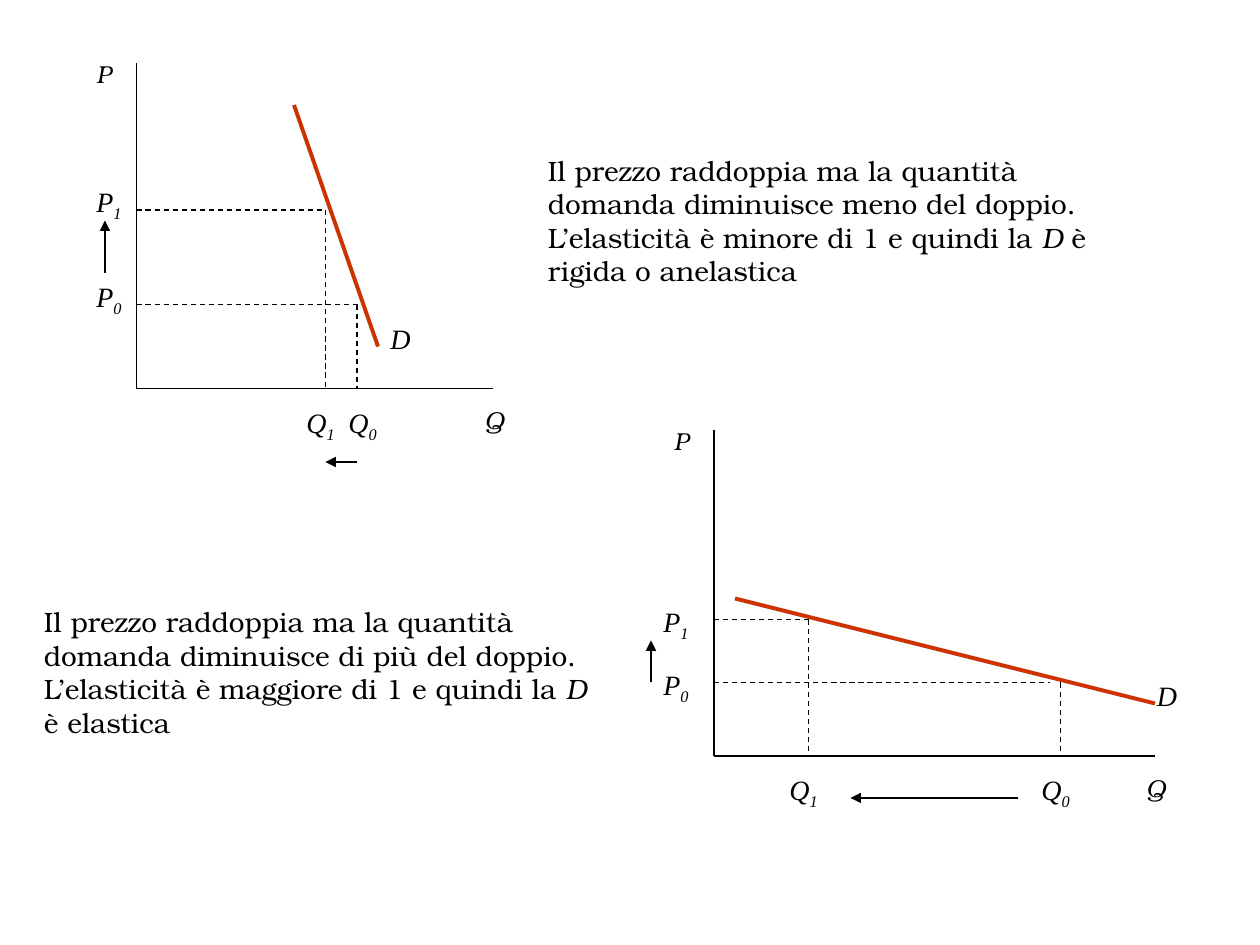
from lxml import etree
from pptx import Presentation
from pptx import util as u
from pptx.dml.color import RGBColor
from pptx.enum import dml, shapes, text
from pptx.oxml import ns

COLUMNS, ROWS = 120, 90
CELL = u.Inches(10) / COLUMNS
BLACK, RED = "000000", "CC3300"
SERIF, BOOK = "Times New Roman", "TeX Gyre Bonum"


def cells(*counts):
    return [u.Emu(round(count * CELL)) for count in counts]


def colour(value):
    return RGBColor.from_string(value)


def add_line(region, start, end, stroke=BLACK, width=0.75, dashed=False, arrow=False):
    line = region.shapes.add_connector(
        shapes.MSO_CONNECTOR.STRAIGHT, *cells(*start, *end))
    line.line.color.rgb = colour(stroke)
    line.line.width = u.Pt(width)
    if dashed:
        line.line.dash_style = dml.MSO_LINE.DASH
    properties = line.element.spPr
    if arrow:
        outline = properties.find(ns.qn("a:ln"))
        etree.SubElement(outline, ns.qn("a:tailEnd"), type="triangle")
    etree.SubElement(properties, ns.qn("a:effectLst"))


def add_text(region, place, spans, size=16, font=SERIF, wrap=True):
    box = region.shapes.add_textbox(*cells(*place))
    box.text_frame.word_wrap = wrap
    box.text_frame.auto_size = text.MSO_AUTO_SIZE.SHAPE_TO_FIT_TEXT
    para = box.text_frame.paragraphs[0]
    for words, italic, lowered in spans:
        span = para.add_run()
        span.text = words
        span.font.size = u.Pt(size)
        span.font.name = font
        span.font.italic = italic
        span.font.color.rgb = colour(BLACK)
        if lowered:
            span.font._element.set("baseline", "-25000")


def add_label(region, place, letter, index="", **style):
    spans = [(letter, True, False)]
    if index:
        spans.append((index, True, True))
    add_text(region, place, spans, **style)


def add_demand_chart(page, box, demand, prices, quantities, guide_end,
                     price_labels, quantity_labels, demand_label,
                     price_arrow, quantity_arrow):
    left, top, width, height = box
    group = page.shapes.add_group_shape()

    def at(x, y):
        return left + x, top + y

    add_line(group, at(0, 0), at(0, height))
    add_line(group, at(0, height), at(width, height))
    add_line(group, *[at(*point) for point in demand], stroke=RED, width=2.25)

    ends = (guide_end, quantities[1])
    for index, price, quantity, end in zip("01", prices, quantities, ends):
        add_line(group, at(0, price), at(end, price), dashed=True)
        add_line(group, at(quantity, price), at(quantity, height), dashed=True)

    for index, (x, y) in zip("01", price_labels):
        add_label(group, (*at(x, y), 6, 4.4), "P", index)
    for index, x in zip("01", quantity_labels):
        add_label(group, (*at(x, height + 1), 7, 4.4), "Q", index)

    add_label(group, (*at(-5, -1), 5, 4), "P", size=14, font=BOOK)
    add_label(group, (*at(width - 2, height + 1), 4.2, 4), "Q",
              size=14, font=BOOK, wrap=False)
    add_label(group, (*at(*demand_label), 4.3, 4.4), "D", wrap=False)

    for start, end in (price_arrow, quantity_arrow):
        add_line(group, at(*start), at(*end), arrow=True)


def add_comment(page, box, opening, ending):
    spans = [(opening, False, False), ("D", True, False), (ending, False, False)]
    add_text(page, box, spans, font=BOOK)


def main():
    deck = Presentation()
    deck.slide_width, deck.slide_height = cells(COLUMNS, ROWS)
    page = deck.slides.add_slide(deck.slide_layouts[6])

    add_demand_chart(
        page, (13, 6, 34, 31),
        demand=((15, 4), (23, 27)),
        prices=(23, 14), quantities=(21, 18), guide_end=21,
        price_labels=((-5, 20), (-5, 11)), quantity_labels=(19, 15),
        demand_label=(23, 24),
        price_arrow=((-3, 20), (-3, 15)),
        quantity_arrow=((21, 38), (18, 38)))
    add_comment(
        page, (51, 14, 54.1, 14),
        "Il prezzo raddoppia ma la quantità domanda diminuisce meno del doppio. "
        "L’elasticità è minore di 1 e quindi la ",
        " è rigida o anelastica")
    add_comment(
        page, (3, 57, 54.1, 14),
        "Il prezzo raddoppia ma la quantità domanda diminuisce di più del doppio. "
        "L’elasticità è maggiore di 1 e quindi la ",
        " è elastica")
    add_demand_chart(
        page, (68, 41, 42, 31),
        demand=((2, 16), (42, 26)),
        prices=(24, 18), quantities=(33, 9), guide_end=32,
        price_labels=((-6, 22), (-6, 16)), quantity_labels=(30, 6),
        demand_label=(41, 23),
        price_arrow=((-6, 24), (-6, 20)),
        quantity_arrow=((29, 35), (13, 35)))

    deck.save("out.pptx")


if __name__ == "__main__":
    main()
